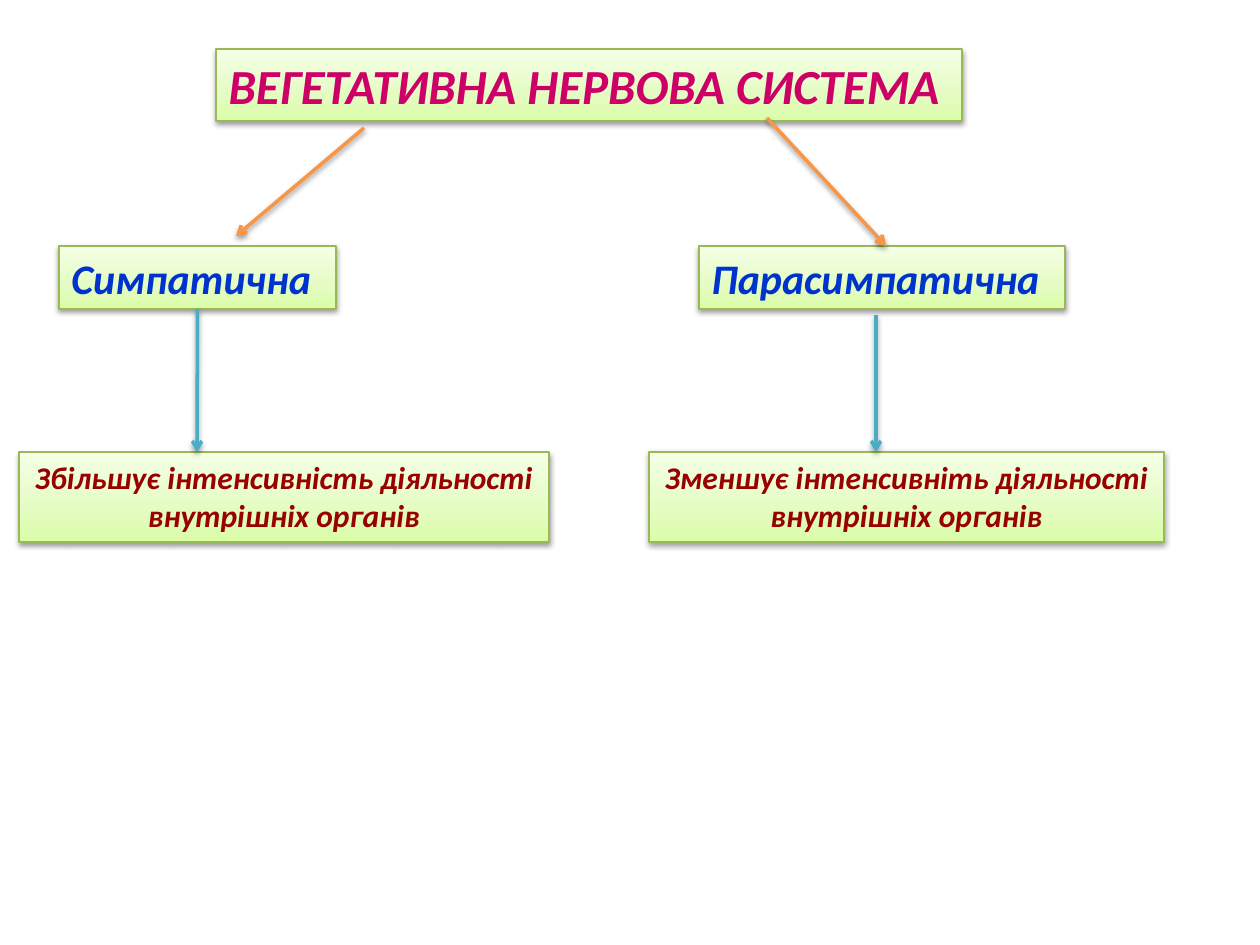
from copy import deepcopy

from lxml import etree
from pptx import Presentation
from pptx.dml.color import RGBColor
from pptx.enum import shapes, text
from pptx.oxml.ns import qn
from pptx.util import Pt

PX = 914400 / 126  # EMU in one px
COLORS = {
    "panel_dark": "DAFDA7", "panel_mid": "E4FCC2", "panel_light": "F5FFE7",
    "panel_edge": "98B955", "shadow": "000000",
    "title": "CC0066", "division": "0033CC", "effect": "990000",
    "split_arrow": "F79646", "effect_arrow": "4BACC6",
}
PANEL_STOPS = [("panel_dark", 0), ("panel_mid", 0.35), ("panel_light", 1)]


def emu(*lengths):
    return [round(length * PX) for length in lengths]


def color(name):
    return RGBColor.from_string(COLORS[name])


def add_shadow(shape):
    effects = etree.SubElement(shape._element.spPr, qn("a:effectLst"))
    shadow = etree.SubElement(effects, qn("a:outerShdw"), blurRad="40000",
                              dist="20000", dir="5400000", rotWithShape="0")
    tint = etree.SubElement(shadow, qn("a:srgbClr"), val=COLORS["shadow"])
    etree.SubElement(tint, qn("a:alpha"), val="38000")


def format_panel(panel, wording, size, ink, align=text.PP_ALIGN.LEFT):
    # Green gradient, dark at the bottom
    panel.fill.gradient()
    panel.fill.gradient_angle = 90
    stop_list = panel._element.spPr.find(".//" + qn("a:gsLst"))
    stop_list.append(deepcopy(stop_list[0]))
    for stop, (name, position) in zip(panel.fill.gradient_stops, PANEL_STOPS):
        stop.color.rgb = color(name)
        stop.position = position
    panel.line.color.rgb = color("panel_edge")
    panel.line.width = Pt(0.75)
    add_shadow(panel)

    # Wording
    frame = panel.text_frame
    frame.text = wording
    frame.word_wrap = True
    frame.auto_size = text.MSO_AUTO_SIZE.NONE
    frame.vertical_anchor = text.MSO_ANCHOR.TOP
    for paragraph in frame.paragraphs:
        paragraph.alignment = align
        for run in paragraph.runs:
            run.font.name = "Calibri"
            run.font.size = Pt(size)
            run.font.bold = run.font.italic = True
            run.font.color.rgb = color(ink)


def add_panel(slide, box, *style):
    panel = slide.shapes.add_shape(shapes.MSO_SHAPE.RECTANGLE, *emu(*box))
    format_panel(panel, *style)
    return panel


def add_arrow(slide, start, end, ink):
    arrow = slide.shapes.add_connector(shapes.MSO_CONNECTOR.STRAIGHT,
                                       *emu(*start, *end))
    arrow.line.color.rgb = color(ink)
    arrow.line.width = Pt(2)
    etree.SubElement(arrow.line._get_or_add_ln(), qn("a:tailEnd"), type="arrow")
    add_shadow(arrow)
    return arrow


def add_title(slide, box):
    title = slide.shapes.title
    title.left, title.top, title.width, title.height = emu(*box)
    format_panel(title, "ВЕГЕТАТИВНА НЕРВОВА СИСТЕМА", 28, "title")


def add_branch(slide, box, division, division_span, effect,
               split, effect_start, effect_end, joined=False):
    """One division, its effect below it, and the arrows leading to both."""
    left, top, width, height = box

    def at(point):
        return left + point[0], top + point[1]

    offset, division_width = division_span
    division_panel = add_panel(slide, (left + offset, top, division_width, 63),
                               division, 24, "division")
    add_panel(slide, (left, top + height - 90, width, 90),
              effect + "\nвнутрішніх органів", 18, "effect",
              text.PP_ALIGN.CENTER)
    add_arrow(slide, at(split[0]), at(split[1]), "split_arrow")
    effect_arrow = add_arrow(slide, at(effect_start), at(effect_end),
                             "effect_arrow")
    if joined:
        effect_arrow.begin_connect(division_panel, 2)


def main():
    deck = Presentation()
    deck.slide_width, deck.slide_height = emu(1260, 945)
    slide = deck.slides.add_slide(deck.slide_layouts[5])

    add_title(slide, (216, 49, 746, 72))
    add_branch(slide, (19, 246, 530, 296), "Симпатична", (40, 277),
               "Збільшує інтенсивність діяльності",
               ((345, -118), (217, -10)), (179, 63), (178, 206), joined=True)
    add_branch(slide, (649, 246, 515, 296), "Парасимпатична", (50, 366),
               "Зменшує інтенсивніть діяльності",
               ((118, -128), (237, 0)), (227, 69), (227, 206))

    deck.save("out.pptx")


if __name__ == "__main__":
    main()
